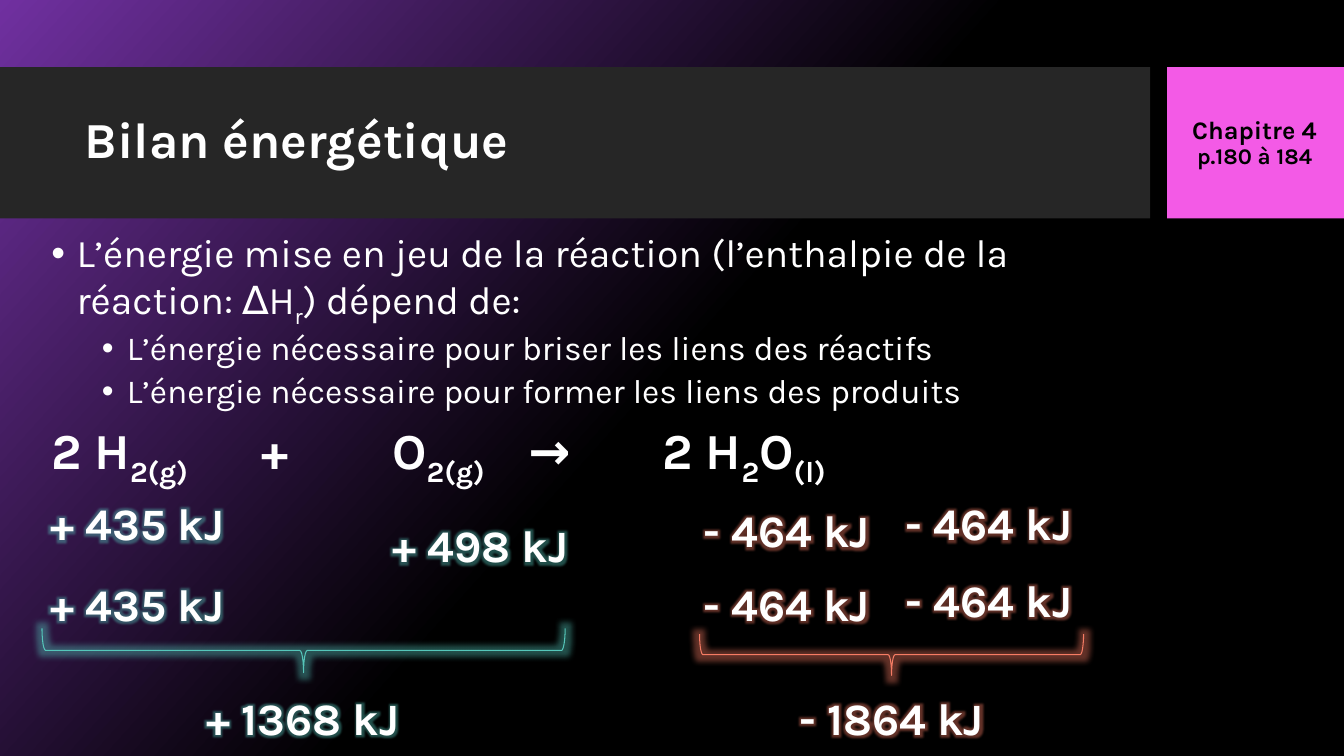
"""Build the slide on the energy balance of water formation."""
import dataclasses
import typing

import lxml.etree
import pptx
import pptx.dml.color
import pptx.enum.shapes
import pptx.enum.text
import pptx.oxml.ns
import pptx.util

ALIGN = pptx.enum.text.PP_ALIGN
ANCHOR = pptx.enum.text.MSO_ANCHOR
FIT = pptx.enum.text.MSO_AUTO_SIZE
KIND = pptx.enum.shapes.MSO_SHAPE
COLS, ROWS = 40, 22.5
UNIT = pptx.util.Inches(7.5) / ROWS


@dataclasses.dataclass(frozen=True)
class Theme:
    font: str = "Karla"
    white: str = "FFFFFF"
    black: str = "000000"
    violet: str = "7030A0"
    bar: str = "262626"
    pink: str = "F35AE6"
    teal: str = "55C6BA"
    coral: str = "F67C64"
    title: int = 36
    value: int = 32
    body: int = 28
    item: int = 24
    head: int = 18
    page: int = 16
    halo: int = 8


class Box(typing.NamedTuple):
    col: float
    row: float
    wide: float
    high: float


class Line(typing.NamedTuple):
    text: str
    size: int
    level: int = 0
    before: int = 0


class Label(typing.NamedTuple):
    text: str
    box: Box
    glow: str


class Brace(typing.NamedTuple):
    box: Box
    color: str


THEME = Theme()
LEFT = [(0.69, 14.61), (0.69, 17.01)]
RIGHT = [(20.01, 14.82), (26.04, 14.61), (20.01, 17.01), (26.04, 16.89)]
LABELS = [
    *[Label("+ 435 kJ", Box(*at, 6.8, 1.92), THEME.teal) for at in LEFT],
    Label("+ 498 kJ", Box(10.89, 15.27, 6.8, 1.92), THEME.teal),
    *[Label("- 464 kJ", Box(*at, 6.8, 1.92), THEME.coral) for at in RIGHT],
    Label("- 1864 kJ", Box(22.62, 20.4, 7.83, 1.92), THEME.coral),
    Label("+ 1368 kJ", Box(5.1, 20.4, 7.83, 1.92), THEME.teal),
]
BRACES = [
    Brace(Box(1.25, 18.7, 15.57, 1.32), THEME.teal),
    Brace(Box(20.82, 18.87, 11.43, 1.23), THEME.coral),
]


def span(units: float) -> int:
    """Turn grid units into a length."""
    return round(units * UNIT)


def rgb(code: str) -> pptx.dml.color.RGBColor:
    """Turn a hex code into a colour."""
    return pptx.dml.color.RGBColor.from_string(code)


def node(root, tag: str, **attrs):
    """Add a drawing element under a root."""
    names = {key: str(val) for key, val in attrs.items()}
    return lxml.etree.SubElement(root, pptx.oxml.ns.qn(f"a:{tag}"), names)


def shine(root, color: str):
    """Add a soft glow and return its effect list."""
    effect = node(root, "effectLst")
    glow = node(effect, "glow", rad=pptx.util.Pt(THEME.halo))
    node(node(glow, "srgbClr", val=color), "alpha", val=40000)
    return effect


def place(shape, box: Box) -> None:
    """Move and size a shape on the grid."""
    shape.left, shape.top, shape.width, shape.height = map(span, box)


def write(shape, lines: list[Line], *, color: str = THEME.white, bold: bool = True,
          align=ALIGN.LEFT, anchor=ANCHOR.TOP, fit=FIT.NONE, pitch: float = 0.9,
          bullet: str = "", tabs: typing.Sequence[float] = (), glow: str = "") -> None:
    """Write lines in a shape, with subscripts between tildes."""
    frame = shape.text_frame
    frame.word_wrap, frame.auto_size, frame.vertical_anchor = True, fit, anchor
    for index, line in enumerate(lines):
        para = frame.add_paragraph() if index else frame.paragraphs[0]
        para.level, para.alignment, para.line_spacing = line.level, align, pitch
        para.space_before = pptx.util.Pt(line.before)
        props = para._p.get_or_add_pPr()
        if bullet:
            inset = pptx.util.Inches(0.25)
            props.set("marL", str(inset * (1 + 2 * line.level)))
            props.set("indent", str(-inset))
            node(props, "buChar", char=bullet)
        if tabs:
            stops = node(props, "tabLst")
            for tab in tabs:
                node(stops, "tab", pos=span(tab), algn="l")
        for part, text in enumerate(line.text.split("~")):
            if not text:
                continue
            run = para.add_run()
            run.text = text
            font = run.font
            font.name, font.size, font.bold = THEME.font, pptx.util.Pt(line.size), bold
            font.color.rgb = rgb(color)
            marks = run._r.get_or_add_rPr()
            if part % 2:
                marks.set("baseline", "-25000")
            if glow:
                fill = marks.find(pptx.oxml.ns.qn("a:solidFill"))
                fill.addnext(shine(marks, glow))


def panel(slide, box: Box, color: str) -> None:
    """Draw a plain filled band."""
    shape = slide.shapes.add_shape(KIND.RECTANGLE, *map(span, box))
    shape.shadow.inherit = False
    shape.fill.solid()
    shape.fill.fore_color.rgb = rgb(color)
    shape.line.fill.background()


def note(slide, box: Box, lines: list[Line], **style) -> None:
    """Add a text box with its lines."""
    write(slide.shapes.add_textbox(*map(span, box)), lines, **style)


def brace(slide, item: Brace) -> None:
    """Draw a glowing brace that points down."""
    col, row, wide, high = item.box
    turn = Box(col + (wide - high) / 2, row + (high - wide) / 2, high, wide)
    shape = slide.shapes.add_shape(KIND.LEFT_BRACE, *map(span, turn))
    shape.rotation = 270
    shape.fill.background()
    shape.line.color.rgb = rgb(item.color)
    shape.line.width = pptx.util.Pt(0.75)
    shine(shape._element.spPr, item.color)


def main() -> None:
    """Compose and save the slide."""
    deck = pptx.Presentation()
    deck.slide_width, deck.slide_height = span(COLS), span(ROWS)
    slide = deck.slides.add_slide(deck.slide_layouts[1])
    back = slide.background.fill
    back.gradient()
    back.gradient_angle = 318
    for stop, color, spot in zip(back.gradient_stops, (THEME.violet, THEME.black), (0, 0.5)):
        stop.color.rgb, stop.position = rgb(color), spot

    panel(slide, Box(0, 2, 34.23, 4.5), THEME.bar)
    panel(slide, Box(34.74, 2, 5.26, 4.5), THEME.pink)
    title, body = slide.placeholders
    for shape, box in ((title, Box(2.22, 2.46, 31.53, 3.54)), (body, Box(1.23, 6.81, 31.02, 5.67))):
        place(shape, box)
        shape.element.getparent().append(shape.element)
    write(title, [Line("Bilan énergétique", THEME.title)], anchor=ANCHOR.MIDDLE)
    write(body, [
        Line("L’énergie mise en jeu de la réaction (l’enthalpie de la réaction: ∆H~r~) dépend de:",
             THEME.body),
        Line("L’énergie nécessaire pour briser les liens des réactifs", THEME.item, 1, 5),
        Line("L’énergie nécessaire pour former les liens des produits", THEME.item, 1, 5),
    ], bold=False, bullet="•")
    note(slide, Box(1.23, 12.33, 30.27, 2.19),
         [Line("2 H~2(g)~\t+\tO~2(g)~\t→\t2 H~2~O~(l)~", THEME.title)],
         anchor=ANCHOR.MIDDLE, tabs=(6.25, 10.15, 14.2, 18.2))
    for item in BRACES:
        brace(slide, item)
    for label in LABELS:
        note(slide, label.box, [Line(label.text, THEME.value)], align=ALIGN.CENTER,
             fit=FIT.SHAPE_TO_FIT_TEXT, pitch=1.0, glow=label.glow)
    note(slide, Box(34.68, 2, 5.32, 4.53),
         [Line("Chapitre 4", THEME.head), Line("p.180 à 184", THEME.page)],
         color=THEME.black, align=ALIGN.CENTER, anchor=ANCHOR.MIDDLE)
    deck.save("out.pptx")


if __name__ == "__main__":
    main()
